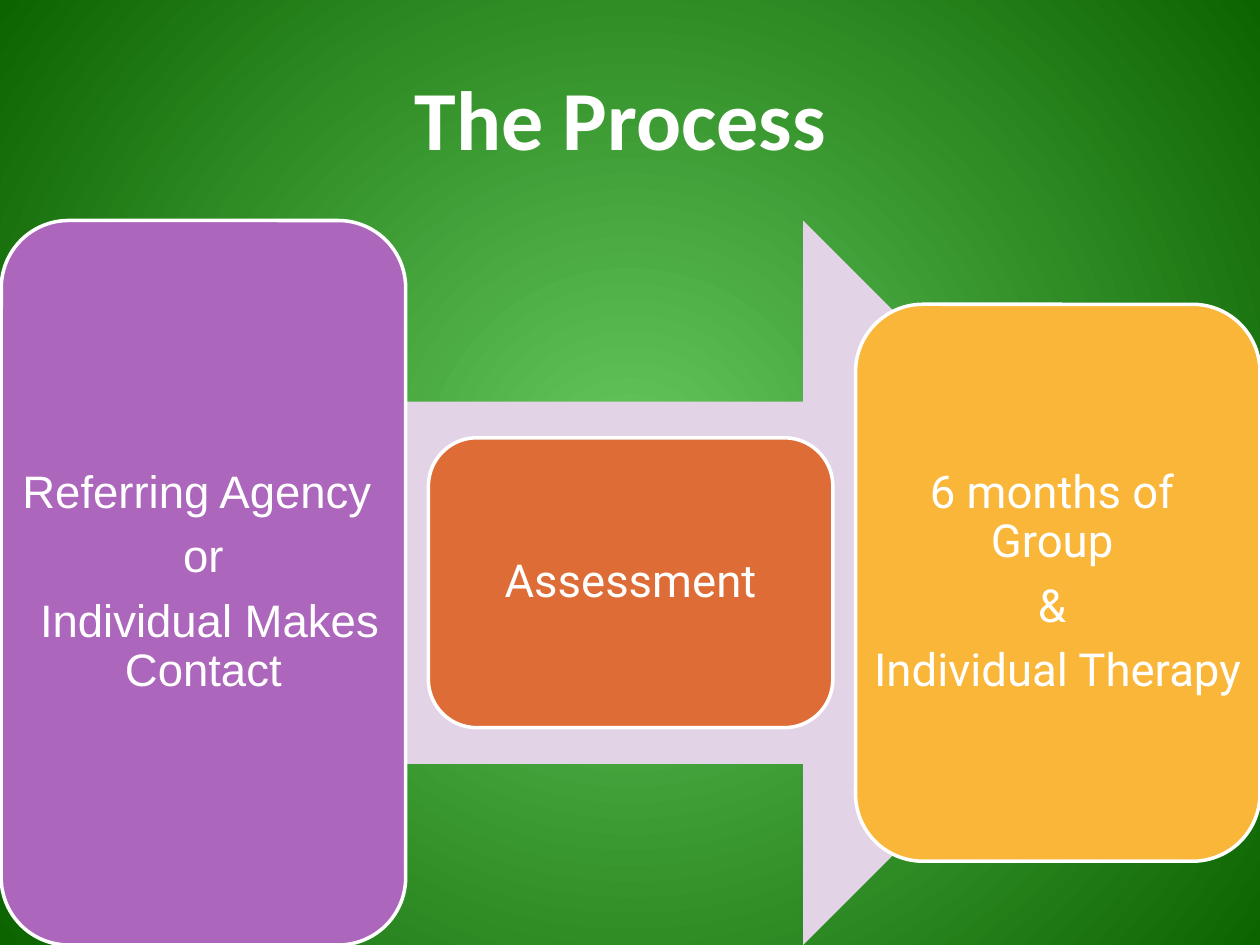
from lxml import etree
from pptx import Presentation
from pptx.dml.color import RGBColor
from pptx.enum import shapes, text
from pptx.oxml import ns
from pptx.util import Inches, Pt

WHITE = RGBColor(0xFF, 0xFF, 0xFF)
LIGHT_GREEN = RGBColor(0x65, 0xC8, 0x5E)
DARK_GREEN = RGBColor(0x0C, 0x64, 0x00)
LILAC = RGBColor(0xE3, 0xD3, 0xE7)
PURPLE = RGBColor(0xAC, 0x66, 0xBB)
ORANGE = RGBColor(0xDE, 0x6C, 0x36)
YELLOW = RGBColor(0xF9, 0xB6, 0x39)


def write(frame, lines, font, size, bold=False, line_spacing=None, space_after=None):
    """Fill the frame with one centred white paragraph per line."""
    frame.word_wrap = True
    frame.vertical_anchor = text.MSO_ANCHOR.MIDDLE
    for index, line in enumerate(lines):
        para = frame.paragraphs[0] if index == 0 else frame.add_paragraph()
        para.alignment = text.PP_ALIGN.CENTER
        para.line_spacing = line_spacing
        para.space_after = space_after
        span = para.add_run()
        span.text = line
        span.font.name = font
        span.font.size = Pt(size)
        span.font.bold = bold
        span.font.color.rgb = WHITE


def add_filled(page, kind, place, color):
    shape = page.shapes.add_shape(kind, *place)
    shape.shadow.inherit = False
    shape.fill.solid()
    shape.fill.fore_color.rgb = color
    shape.line.fill.background()
    return shape


deck = Presentation()
deck.slide_width, deck.slide_height = Inches(10), Inches(7.5)
page = deck.slides.add_slide(deck.slide_layouts[5])

# Radial background, light in the middle
backdrop = page.background.fill
backdrop.gradient()
for stop, color, position in zip(backdrop.gradient_stops, (LIGHT_GREEN, DARK_GREEN), (0, 1)):
    stop.color.rgb = color
    stop.position = position
gradient = page.background._cSld.find(".//" + ns.qn("a:gradFill"))
linear = gradient.find(ns.qn("a:lin"))
radial = etree.Element(ns.qn("a:path"), path="circle")
etree.SubElement(radial, ns.qn("a:fillToRect"), l="50000", t="50000", r="50000", b="50000")
gradient.replace(linear, radial)

title = page.shapes.title
title.left, title.top = Inches(0.5), Inches(0.3)
title.width, title.height = Inches(9), Inches(1.25)
write(title.text_frame, ["The Process "], "Calibri", 48, bold=True)

ARROW_TOP, ARROW_HEIGHT = 1.75, 5.75
arrow_place = [Inches(n) for n in (0.75, ARROW_TOP, 8.5, ARROW_HEIGHT)]
add_filled(page, shapes.MSO_SHAPE.RIGHT_ARROW, arrow_place, LILAC)

# Three equally spaced steps, each centred on the arrow's axis
STEP_LEFT, STEP_PITCH, STEP_WIDTH = 0.01, 3.39, 3.21
steps = [
    (5.75, PURPLE, "Arial", ["Referring Agency ", "or", " Individual Makes Contact"]),
    (2.3, ORANGE, "Roboto", ["Assessment"]),
    (4.42, YELLOW, "Roboto", ["6 months of  Group ", "& ", "Individual Therapy"]),
]
for index, (height, color, font, lines) in enumerate(steps):
    left = STEP_LEFT + index * STEP_PITCH
    top = ARROW_TOP + (ARROW_HEIGHT - height) / 2
    place = [Inches(n) for n in (left, top, STEP_WIDTH, height)]
    step = add_filled(page, shapes.MSO_SHAPE.ROUNDED_RECTANGLE, place, color)
    step.line.color.rgb = WHITE
    step.line.width = Pt(2)

    # A box of its own keeps the text clear of the rounded corners' inset
    frame = page.shapes.add_textbox(*place).text_frame
    frame.margin_left = frame.margin_right = Inches(0.11)
    frame.margin_top = frame.margin_bottom = Inches(0.11)
    write(frame, lines, font, 26, line_spacing=0.9, space_after=Pt(9))

deck.save("out.pptx")
